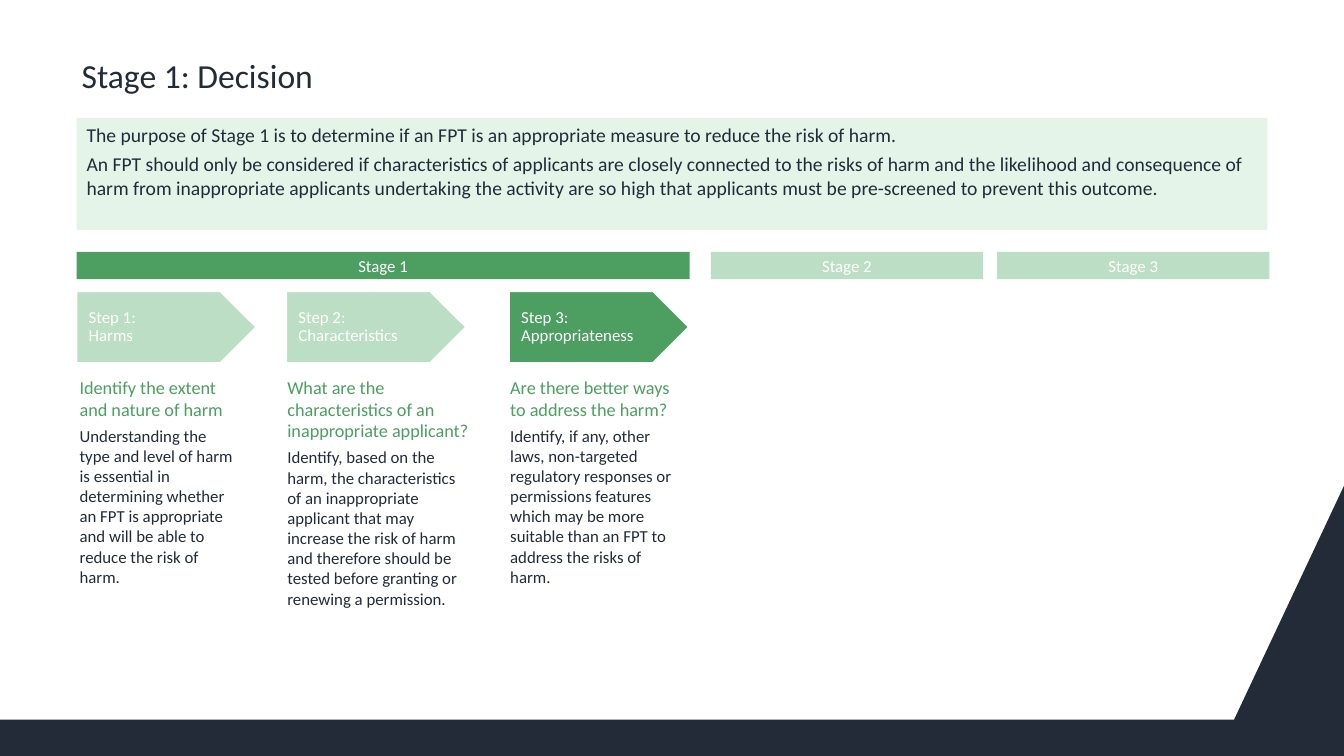
import dataclasses
import typing

import pptx
import pptx.dml.color
import pptx.enum.shapes
import pptx.enum.text
import pptx.oxml.ns
import pptx.oxml.xmlchemy
import pptx.util

Inches = pptx.util.Inches
Pt = pptx.util.Pt
Color = pptx.dml.color.RGBColor
Shapes = pptx.enum.shapes.MSO_SHAPE
Anchor = pptx.enum.text.MSO_ANCHOR
Align = pptx.enum.text.PP_ALIGN


@dataclasses.dataclass(frozen=True)
class Theme:
    face: str = "Calibri"
    navy: str = "232B39"
    green: str = "4C9E61"
    faded: str = "BCDEC4"
    tint: str = "E4F4E8"
    white: str = "FFFFFF"
    title: int = 24
    lead: int = 14
    head: int = 13
    body: int = 12


class Box(typing.NamedTuple):
    left: float
    top: float
    width: float
    height: float


class Line(typing.NamedTuple):
    text: str
    size: int
    color: str


class Stage(typing.NamedTuple):
    label: str
    left: float
    width: float
    fill: str


class Step(typing.NamedTuple):
    label: str
    left: float
    fill: str
    card: Box
    head: str
    body: str


THEME = Theme()
INSET = (0.1, 0.05, 0.1, 0.05)
CARD_INSET = (0.12, 0.12, 0.12, 0.08)
STEP_INSET = (0.12, 0.02, 0.12, 0.02)

STAGES = [
    Stage("Stage 1", 0.76, 6.08, THEME.green),
    Stage("Stage 2", 7.05, 2.7, THEME.faded),
    Stage("Stage 3", 9.89, 2.7, THEME.faded),
]

STEPS = [
    Step("Step 1: \vHarms", 0.76, THEME.faded, Box(0.67, 3.61, 1.8, 3.11),
         "Identify the extent and nature of harm",
         "Understanding the type and level of harm is essential in determining "
         "whether an FPT is appropriate and will be able to reduce the risk of harm."),
    Step("Step 2: Characteristics", 2.84, THEME.faded, Box(2.73, 3.61, 2.08, 3.17),
         "What are the characteristics of an inappropriate applicant?",
         "Identify, based on the harm, the characteristics of an inappropriate "
         "applicant that may increase the risk of harm and therefore should be "
         "tested before granting or renewing a permission."),
    Step("Step 3: Appropriateness", 5.05, THEME.green, Box(4.94, 3.61, 1.89, 3.12),
         "Are there better ways to address the harm?",
         "Identify, if any, other laws, non-targeted regulatory responses or "
         "permissions features which may be more suitable than an FPT to "
         "address the risks of harm."),
]

PURPOSE = [
    "The purpose of Stage 1 is to determine if an FPT is an appropriate measure "
    "to reduce the risk of harm.",
    "An FPT should only be considered if characteristics of applicants are closely "
    "connected to the risks of harm and the likelihood and consequence of harm from "
    "inappropriate applicants undertaking the activity are so high that applicants "
    "must be pre-screened to prevent this outcome.",
]


def apply(target: typing.Any, values: dict[str, typing.Any]) -> None:
    for name, value in values.items():
        setattr(target, name, value)


def paint(shape: typing.Any, fill: str, edge: str | None = None) -> None:
    shape.shadow.inherit = False
    shape.fill.solid()
    shape.fill.fore_color.rgb = Color.from_string(fill)
    if edge:
        shape.line.color.rgb = Color.from_string(edge)
        shape.line.width = Pt(1)
    else:
        shape.line.fill.background()


def add_block(slide: typing.Any, box: Box, fill: str,
              kind: typing.Any = Shapes.RECTANGLE, edge: str | None = None) -> typing.Any:
    shape = slide.shapes.add_shape(kind, *map(Inches, box))
    paint(shape, fill, edge)
    return shape


def write(shape: typing.Any, lines: list[Line], inset: tuple[float, ...] = INSET,
          anchor: typing.Any = Anchor.TOP, **spacing: typing.Any) -> None:
    frame = shape.text_frame
    sides = ("margin_left", "margin_top", "margin_right", "margin_bottom")
    apply(frame, {"word_wrap": True, "vertical_anchor": anchor,
                  **dict(zip(sides, map(Inches, inset)))})
    for index, line in enumerate(lines):
        para = frame.add_paragraph() if index else frame.paragraphs[0]
        para.text = line.text
        apply(para, {"alignment": Align.LEFT, **spacing})
        for run in para.runs:
            apply(run.font, {"name": THEME.face, "size": Pt(line.size)})
            run.font.color.rgb = Color.from_string(line.color)
        # Give line breaks the size of their text
        for mark in para._p.findall(pptx.oxml.ns.qn("a:br")):
            props = pptx.oxml.xmlchemy.OxmlElement("a:rPr")
            props.set("sz", str(line.size * 100))
            mark.append(props)


def add_label(slide: typing.Any, box: Box, line: Line, **style: typing.Any) -> None:
    write(slide.shapes.add_textbox(*map(Inches, box)), [line], **style)


def add_base(slide: typing.Any) -> None:
    points = [(12.24, 7.14), (0, 7.14), (0, 7.5), (13.33, 7.5), (13.33, 4.82)]
    start, *rest = [(Inches(x), Inches(y)) for x, y in points]
    pen = slide.shapes.build_freeform(*start, scale=1.0)
    pen.add_line_segments(rest, close=True)
    paint(pen.convert_to_shape(), THEME.navy)


def add_stage(slide: typing.Any, stage: Stage) -> None:
    bar = add_block(slide, Box(stage.left, 2.5, stage.width, 0.27), stage.fill)
    write(bar, [Line(stage.label, THEME.body, THEME.white)],
          anchor=Anchor.MIDDLE, alignment=Align.CENTER)


def add_step(slide: typing.Any, step: Step) -> None:
    card = add_block(slide, step.card, THEME.white)
    write(card, [Line(step.head, THEME.head, THEME.green),
                 Line(step.body, THEME.body, THEME.navy)],
          CARD_INSET, space_after=Pt(4))
    add_block(slide, Box(step.left, 2.89, 1.78, 0.71), step.fill,
              Shapes.PENTAGON, THEME.white)
    add_label(slide, Box(step.left, 2.89, 1.6, 0.71),
              Line(step.label, THEME.body, THEME.white),
              inset=STEP_INSET, anchor=Anchor.MIDDLE, line_spacing=0.9)


def main() -> None:
    deck = pptx.Presentation()
    apply(deck, {"slide_width": Inches(13.33), "slide_height": Inches(7.5)})
    slide = deck.slides.add_slide(deck.slide_layouts[6])

    # Dark base with its slanted corner
    add_base(slide)

    # Title and purpose panel
    add_label(slide, Box(0.77, 0.44, 11.5, 0.56),
              Line("Stage 1: Decision", THEME.title, THEME.navy),
              inset=(0.04, 0.05, 0.04, 0.05), anchor=Anchor.BOTTOM, line_spacing=0.9)
    panel = add_block(slide, Box(0.76, 1.17, 11.81, 1.11), THEME.tint)
    write(panel, [Line(text, THEME.lead, THEME.navy) for text in PURPOSE],
          space_before=Pt(2), space_after=Pt(2))

    # Stage bars, then the steps of the first stage
    for stage in STAGES:
        add_stage(slide, stage)
    for step in STEPS:
        add_step(slide, step)

    deck.save("out.pptx")


if __name__ == "__main__":
    main()
